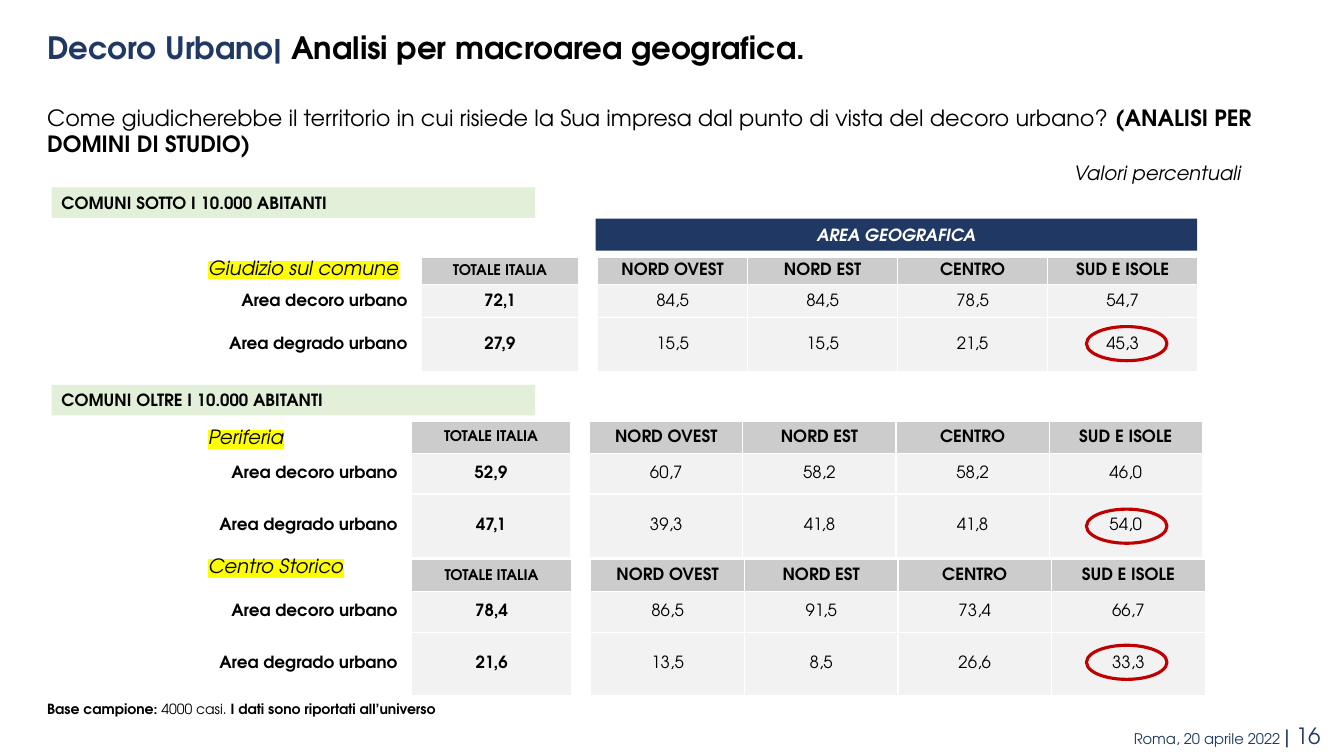
from pptx import Presentation
from pptx.dml.color import RGBColor
from pptx.enum.shapes import MSO_SHAPE
from pptx.enum.text import MSO_ANCHOR, PP_ALIGN
from pptx.oxml.xmlchemy import OxmlElement
from pptx.util import Cm, Pt

NAVY = RGBColor(0x20, 0x38, 0x64)
BLACK = RGBColor(0, 0, 0)
WHITE = RGBColor(0xFF, 0xFF, 0xFF)
GREEN = RGBColor(0xE2, 0xEF, 0xD9)
RED = RGBColor(0xC0, 0, 0)
HEADER_GREY = RGBColor(0xCC, 0xCC, 0xCC)
BODY_GREY = RGBColor(0xF2, 0xF2, 0xF2)
YELLOW = RGBColor(0xFF, 0xFF, 0)
FONT = "TeX Gyre Adventor"
LEFT, CENTER, RIGHT = PP_ALIGN.LEFT, PP_ALIGN.CENTER, PP_ALIGN.RIGHT

# Content: lengths in cm, sizes in points
HEADER = ["", "TOTALE ITALIA", "NORD OVEST", "NORD EST", "CENTRO", "SUD E ISOLE"]
DECORO, DEGRADO = "Area decoro urbano", "Area degrado urbano"
LARGE_ROWS = (0.81, 1.02, 1.6)
TABLES = [
    dict(left=1.7, top=6.48, label=8.59, total=3.96, area=3.78, rows=(0.69, 0.84, 1.35),
         data=[[DECORO, "72,1", "84,5", "84,5", "78,5", "54,7"],
               [DEGRADO, "27,9", "15,5", "15,5", "21,5", "45,3"]]),
    dict(left=1.3, top=10.62, label=8.74, total=4.01, area=3.86, rows=LARGE_ROWS,
         data=[[DECORO, "52,9", "60,7", "58,2", "58,2", "46,0"],
               [DEGRADO, "47,1", "39,3", "41,8", "41,8", "54,0"]]),
    dict(left=1.3, top=14.1, label=8.74, total=4.04, area=3.87, rows=LARGE_ROWS,
         data=[[DECORO, "78,4", "86,5", "91,5", "73,4", "66,7"],
               [DEGRADO, "21,6", "13,5", "8,5", "26,6", "33,3"]]),
]
TEXTS = [  # (left, top, width, height), alignment, runs
    ((0.94, 0.61, 32.28, 2.13), LEFT,
     [("Decoro Urbano| ", dict(size=22, color=NAVY, bold=True)),
      ("Analisi per macroarea geografica.", dict(size=22, bold=True))]),
    ((0.94, 2.49, 32.05, 1.63), LEFT,
     [("Come giudicherebbe il territorio in cui risiede la Sua impresa dal punto "
       "di vista del decoro urbano? ", dict(size=16)),
      ("(ANALISI PER DOMINI DI STUDIO)", dict(size=16, bold=True))]),
    ((26.82, 3.94, 5.92, 0.86), LEFT,
     [("Valori percentuali", dict(size=14, italic=True))]),
    ((0.94, 17.53, 23.39, 0.69), LEFT,
     [("Base campione:", dict(size=10, bold=True)),
      (" 4000 casi. ", dict(size=10)),
      ("I dati sono riportati all’universo", dict(size=10, bold=True))]),
    ((15.93, 18.06, 17.6, 0.94), RIGHT,
     [("Roma, 20 aprile 2022 ", dict(size=10.5, color=NAVY)),
      ("| 16", dict(size=16, color=NAVY))]),
]
SECTIONS = [("Giudizio sul comune", 6.32), ("Periferia", 10.59), ("Centro Storico", 13.84)]
BANNERS = [("COMUNI SOTTO I 10.000 ABITANTI", 4.72), ("COMUNI OLTRE I 10.000 ABITANTI", 9.7)]
CIRCLE_TOPS = [8.23, 12.83, 16.26]


def write(tf, runs, align=LEFT):
    p = tf.paragraphs[0]
    p.alignment = align
    for text, fmt in runs:
        r = p.add_run()
        r.text = text
        style = dict(name=FONT, bold=False, italic=False)
        style.update({k: v for k, v in fmt.items() if k in ("bold", "italic")})
        for key, value in style.items():
            setattr(r.font, key, value)
        r.font.size = Pt(fmt["size"])
        r.font.color.rgb = fmt.get("color", BLACK)
        if "highlight" in fmt:
            mark = OxmlElement("a:highlight")
            clr = OxmlElement("a:srgbClr")
            clr.set("val", str(fmt["highlight"]))
            mark.append(clr)
            r.font._element.solidFill.addnext(mark)


def add_text(box, runs, align=LEFT):
    tf = slide.shapes.add_textbox(*map(Cm, box)).text_frame
    tf.word_wrap = True
    write(tf, runs, align)


def add_shape(kind, box, fill=None):
    sp = slide.shapes.add_shape(kind, *map(Cm, box))
    sp.shadow.inherit = False
    if fill is None:
        sp.fill.background()
    else:
        sp.fill.solid()
        sp.fill.fore_color.rgb = fill
        sp.line.fill.background()
    return sp


def set_borders(cell):
    tc_pr = cell._tc.get_or_add_tcPr()
    for i, tag in enumerate(("a:lnL", "a:lnR", "a:lnT", "a:lnB")):
        ln, fill, clr = (OxmlElement(t) for t in (tag, "a:solidFill", "a:srgbClr"))
        ln.set("w", str(Pt(1)))
        clr.set("val", str(WHITE))
        fill.append(clr)
        ln.append(fill)
        tc_pr.insert(i, ln)


def fill_cell(cell, text, row, col):
    for side in ("left", "right", "top"):
        setattr(cell, f"margin_{side}", Cm(0.02))
    cell.margin_bottom = 0
    cell.vertical_anchor = MSO_ANCHOR.MIDDLE
    cell.fill.solid()
    if col == 0 or not text:
        cell.fill.fore_color.rgb = WHITE
    else:
        cell.fill.fore_color.rgb = BODY_GREY if row else HEADER_GREY
    set_borders(cell)
    if text:
        size = 10.5 if (row, col) == (0, 2) else 12
        write(cell.text_frame, [(text, dict(size=size, bold=row == 0 or col <= 2))],
              CENTER if col else RIGHT)
    else:  # keeps the empty cell from stretching its row
        end = OxmlElement("a:endParaRPr")
        end.set("sz", "1000")
        cell.text_frame.paragraphs[0]._p.append(end)


def add_data_table(left, top, label, total, area, rows, data):
    widths = [label, 0.33, total, 0.15, 0.33] + [area] * 4 + [0.33]
    gf = slide.shapes.add_table(len(rows), len(widths), Cm(left), Cm(top),
                                Cm(sum(widths)), Cm(sum(rows)))
    table = gf.table
    table.first_row = table.horz_banding = False
    for column, width in zip(table.columns, widths):
        column.width = Cm(width)
    for i, (height, line) in enumerate(zip(rows, [HEADER] + data)):
        table.rows[i].height = Cm(height)
        spaced = [line[0], "", line[1], "", ""] + line[2:] + [""]
        for j, text in enumerate(spaced):
            fill_cell(table.cell(i, j), text, i, j)


prs = Presentation()
prs.slide_width, prs.slide_height = Cm(33.87), Cm(19.05)
slide = prs.slides.add_slide(prs.slide_layouts[6])

# Tables
for spec_table in TABLES:
    add_data_table(**spec_table)

# Banners
sp = add_shape(MSO_SHAPE.RECTANGLE, (15.01, 5.51, 15.16, 0.81), NAVY)
sp.text_frame.vertical_anchor = MSO_ANCHOR.MIDDLE
write(sp.text_frame, [("AREA GEOGRAFICA", dict(size=12, color=WHITE, bold=True, italic=True))],
      CENTER)
for title, top in BANNERS:
    sp = add_shape(MSO_SHAPE.RECTANGLE, (1.3, top, 12.19, 0.77), GREEN)
    sp.text_frame.vertical_anchor = MSO_ANCHOR.TOP
    write(sp.text_frame, [(title, dict(size=12, bold=True))])

# Texts and section labels
for box, align, runs in TEXTS:
    add_text(box, runs, align)
for title, top in SECTIONS:
    add_text((5, top, 5.92, 0.86), [(title, dict(size=14, italic=True, highlight=YELLOW))])

# Circles around the southern values
for top in CIRCLE_TOPS:
    sp = add_shape(MSO_SHAPE.OVAL, (27.38, top, 2.03, 0.86))
    sp.line.color.rgb = RED
    sp.line.width = Pt(2.25)

prs.save("out.pptx")
